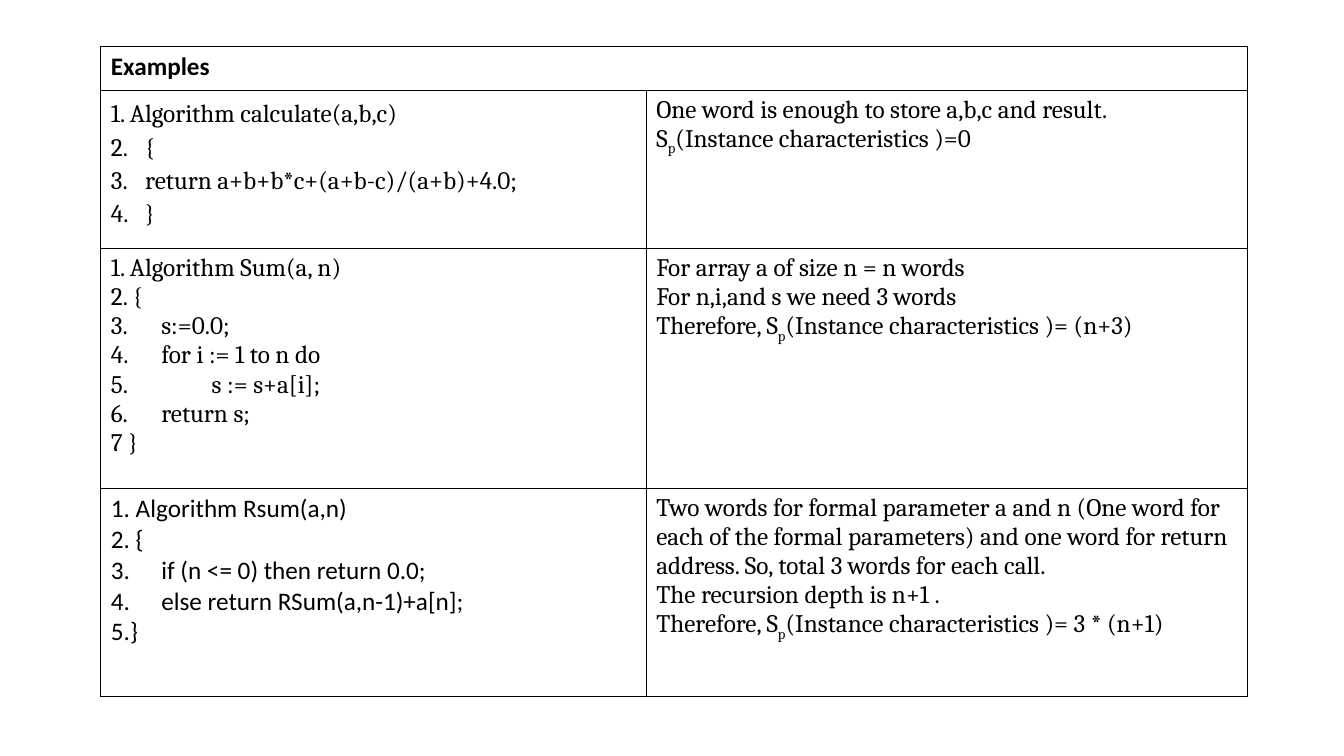
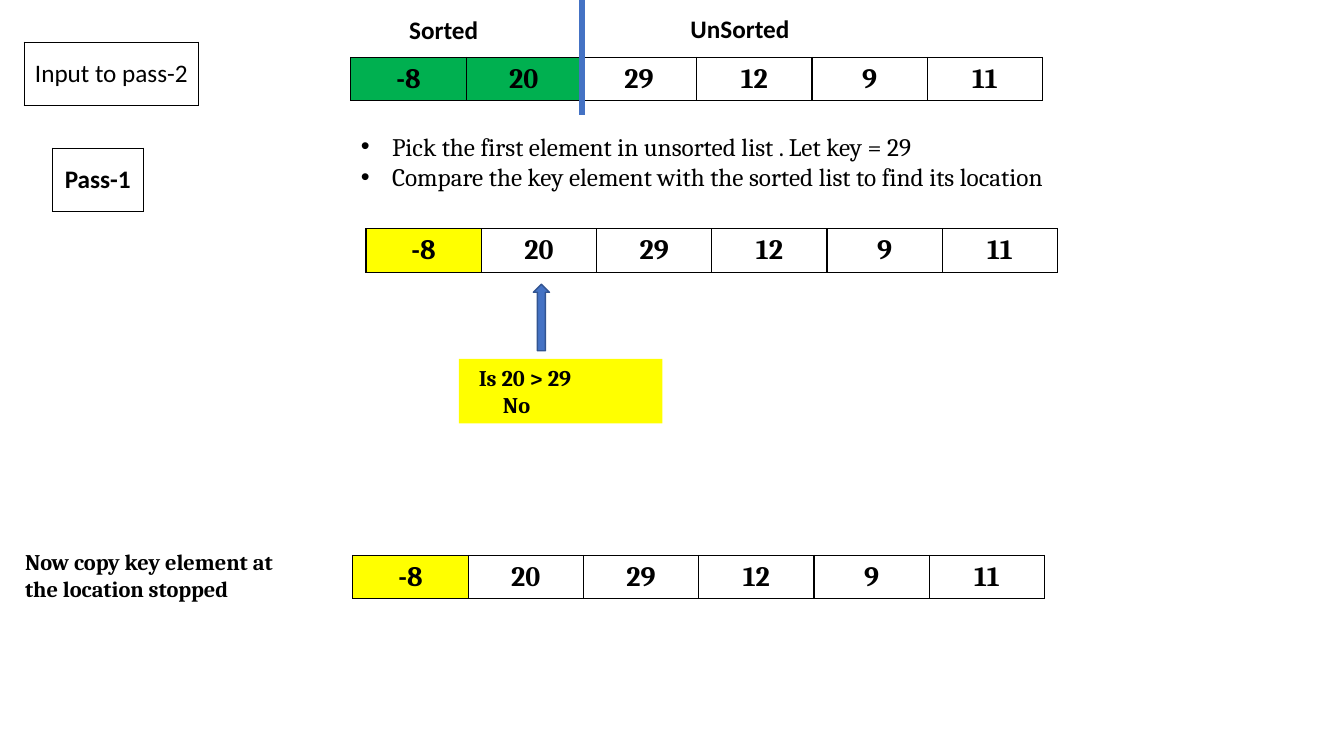
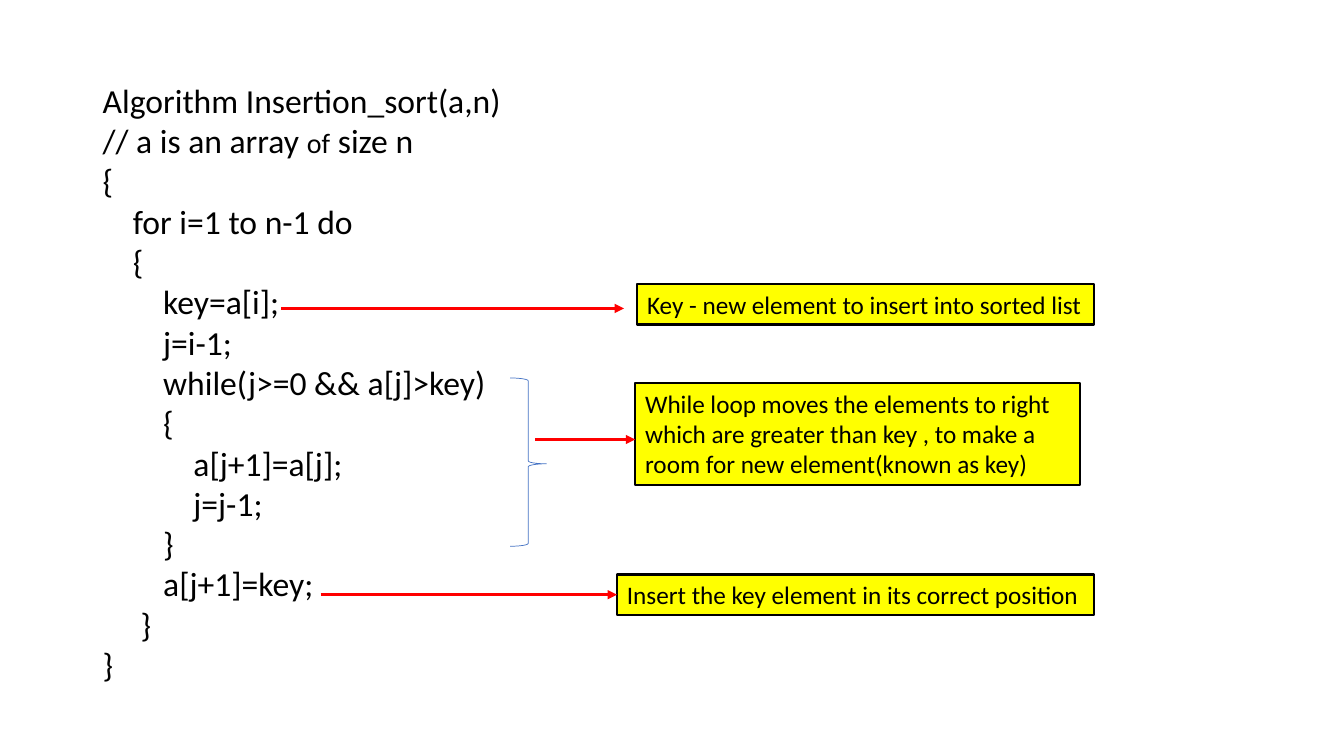
"""Build three slides on space complexity and insertion sort."""
from dataclasses import dataclass

from lxml import etree
from pptx import Presentation
from pptx import util as u
from pptx.dml.color import RGBColor
from pptx.enum import shapes, text
from pptx.oxml.ns import qn

BLACK = RGBColor(0, 0, 0)
WHITE = RGBColor(255, 255, 255)
GREEN = RGBColor(0x00, 0xB0, 0x50)
YELLOW = RGBColor(255, 255, 0)
RED = RGBColor(255, 0, 0)
BLUE = RGBColor(0x44, 0x72, 0xC4)
DARK_BLUE = RGBColor(0x32, 0x54, 0x91)
SANS, SERIF = "Calibri", "Cambria"


@dataclass
class Style:
    font: str = SANS
    size: int = 18
    bold: bool = False
    centred: bool = False
    spacing: float = 1.0


@dataclass
class Line:
    runs: tuple
    indent: float = 0
    tab: float = 0
    bullet: bool = False


@dataclass
class Small:
    text: str
    size: int = 18
    baseline: int = 0


BODY = Style(SERIF)
LABEL = Style(bold=True)
NUMBER = Style(SERIF, 20, True, True)
NOTE = Style(SERIF, 16, True)
CODE = Style(size=24)


def space_need(before, after):
    return Line((before + "S", Small("p", baseline=-25000),
                 "(Instance characteristics )" + after))


EXAMPLES = [
    (Style(SERIF, spacing=1.15),
     ["1. Algorithm calculate(a,b,c)", Line(("2.\t{",), tab=0.34),
      "3.\treturn a+b+b*c+(a+b-c)/(a+b)+4.0;", Line(("4.\t}",), tab=0.34)],
     ["One word is enough to store a,b,c and result.", space_need("", "=0")]),
    (BODY,
     ["1. Algorithm Sum(a, n)", "2. {", "3.\ts:=0.0;", "4.\tfor i := 1 to n do",
      "5.\t\ts := s+a[i];", "6.\treturn s;", "7 }"],
     ["For array a of size n = n words", "For n,i,and s we need 3 words",
      space_need("Therefore, ", "= (n+3)")]),
    (Style(),
     ["1. Algorithm Rsum(a,n)", "2. {", "3.\tif (n <= 0) then return 0.0;",
      "4.\telse return RSum(a,n-1)+a[n];", "5.}"],
     ["Two words for formal parameter a and n (One word for each of the formal "
      "parameters) and one word for return address. So, total 3 words for each call.",
      "The recursion depth is n+1 .", space_need("Therefore, ", "= 3 * (n+1)")]),
]
EXAMPLE_COLUMNS = [5.41, 5.96]
EXAMPLE_ROWS = [0.44, 1.57, 2.38, 2.06]

NUMBERS = ["-8", "20", "29", "12", "9", "11"]
ARRAYS = [(3.48, 0.57, [GREEN, GREEN]), (3.63, 2.27, [YELLOW]), (3.5, 5.51, [YELLOW])]
TAGS = [("Pass-1", LABEL, (0.52, 1.47, 0.9, 0.63)),
        ("Input to pass-2", Style(), (0.24, 0.42, 1.73, 0.63))]
HEADINGS = [("Sorted", (3.96, 0.09, 0.89, 0.4)), ("UnSorted", (6.75, 0.08, 1.19, 0.4))]
STEPS = ["Pick the first element in unsorted list . Let key = 29",
         "Compare the key element with the sorted list to find its location"]

CODE_STEP = 0.3
SORT_CODE = [
    (0, "Algorithm Insertion_sort(a,n)"),
    (0, "// a is an array ", Small("of", 20), " size n"),
    (0, "{"), (1, "for i=1 to n-1 do"), (1, "{"), (2, "key=a[i];"), (2, "j=i-1;"),
    (2, "while(j>=0 && a[j]>key)"), (2, "{"), (3, "a[j+1]=a[j];"), (3, "j=j-1;"),
    (2, "}"), (2, "a[j+1]=key;"), (1.25, "}"), (0, "}"),
]
CALLOUTS = [
    ("Key - new element to insert into sorted list",
     (6.32, 2.82, 4.53, 0.4), (2.79, 3.06), (6.19, 3.06), False),
    ("While loop moves the elements to right which are greater than key , "
     "to make a room for new element(known as key)",
     (6.3, 3.8, 4.41, 1.01), (5.31, 4.36), (6.3, 4.36), False),
    ("Insert the key element in its correct position",
     (6.12, 5.7, 4.73, 0.4), (3.18, 5.9), (6.12, 5.9), True),
]


def inches(values):
    return [u.Inches(value) for value in values]


def write(frame, lines, style):
    for index, line in enumerate(lines):
        line = line if isinstance(line, Line) else Line((line,))
        para = frame.paragraphs[0] if index == 0 else frame.add_paragraph()
        para.alignment = text.PP_ALIGN.CENTER if style.centred else text.PP_ALIGN.LEFT
        para.line_spacing = style.spacing
        props = para._p.get_or_add_pPr()
        if line.indent:
            props.set("marL", str(u.Inches(line.indent)))
        if line.bullet:
            props.set("indent", str(-u.Inches(line.indent)))
            etree.SubElement(props, qn("a:buFont"), typeface="Arial")
            etree.SubElement(props, qn("a:buChar"), char="•")
        if line.tab:
            stops = etree.SubElement(props, qn("a:tabLst"))
            etree.SubElement(stops, qn("a:tab"), pos=str(u.Inches(line.tab)), algn="l")
        for part in line.runs:
            part = part if isinstance(part, Small) else Small(part, style.size)
            span = para.add_run()
            span.text = part.text
            span.font.name, span.font.size = style.font, u.Pt(part.size)
            span.font.bold = style.bold
            span.font.color.rgb = BLACK
            if part.baseline:
                span._r.get_or_add_rPr().set("baseline", str(part.baseline))


def paint(shape, fill, line=None, width=1):
    shape.shadow.inherit = False
    if fill is None:
        shape.fill.background()
    else:
        shape.fill.solid()
        shape.fill.fore_color.rgb = fill
    if line is None:
        shape.line.fill.background()
    else:
        shape.line.color.rgb = line
        shape.line.width = u.Pt(width)


def add_text(page, place, lines, style, wrap=True):
    box = page.shapes.add_textbox(*inches(place))
    box.text_frame.word_wrap = wrap
    write(box.text_frame, lines, style)


def add_note(page, place, lines, style, line=None):
    note = page.shapes.add_shape(shapes.MSO_SHAPE.RECTANGLE, *inches(place))
    paint(note, YELLOW, line, 1.5)
    note.text_frame.word_wrap = True
    note.text_frame.vertical_anchor = text.MSO_ANCHOR.TOP
    write(note.text_frame, lines, style)
    return note


def add_line(page, start, end, color, width, arrow=False):
    line = page.shapes.add_connector(shapes.MSO_CONNECTOR.STRAIGHT, *inches(start + end))
    line.line.color.rgb = color
    line.line.width = u.Pt(width)
    if arrow:
        etree.SubElement(line.line._get_or_add_ln(), qn("a:tailEnd"), type="triangle")
    etree.SubElement(line._element.spPr, qn("a:effectLst"))
    return line


def add_grid(page, place, rows, columns):
    grid = page.shapes.add_table(rows, columns, *inches(place)).table
    grid.first_row = grid.horz_banding = False
    for cell in grid.iter_cells():
        props = cell._tc.get_or_add_tcPr()
        for side in ("a:lnL", "a:lnR", "a:lnT", "a:lnB"):
            edge = etree.SubElement(props, qn(side), w=str(u.Pt(1)))
            ink = etree.SubElement(edge, qn("a:solidFill"))
            etree.SubElement(ink, qn("a:srgbClr"), val=str(BLACK))
        cell.fill.solid()
        cell.fill.fore_color.rgb = WHITE
    return grid


def add_row(page, place, words, style, fills=()):
    grid = add_grid(page, place, 1, len(words))
    for cell, word in zip(grid.iter_cells(), words):
        cell.vertical_anchor = text.MSO_ANCHOR.MIDDLE
        write(cell.text_frame, [Line((word,))], style)
    for cell, fill in zip(grid.iter_cells(), fills):
        cell.fill.fore_color.rgb = fill


def build_examples(page):
    place = (1, 0.46, sum(EXAMPLE_COLUMNS), sum(EXAMPLE_ROWS))
    grid = add_grid(page, place, len(EXAMPLE_ROWS), len(EXAMPLE_COLUMNS))
    for column, width in zip(grid.columns, EXAMPLE_COLUMNS):
        column.width = u.Inches(width)
    for row, height in zip(grid.rows, EXAMPLE_ROWS):
        row.height = u.Inches(height)
    grid.cell(0, 0).merge(grid.cell(0, 1))
    write(grid.cell(0, 0).text_frame, ["Examples"], LABEL)
    for index, (style, code, need) in enumerate(EXAMPLES, 1):
        write(grid.cell(index, 0).text_frame, code, style)
        write(grid.cell(index, 1).text_frame, need, BODY)


def build_pass(page):
    for word, style, place in TAGS:
        add_row(page, place, [word], Style(bold=style.bold, centred=True))
    for left, top, fills in ARRAYS:
        add_row(page, (left, top, 6.86, 0.43), NUMBERS, NUMBER, fills)
    add_line(page, (5.77, 0), (5.77, 1.14), BLUE, 4.5)
    for word, place in HEADINGS:
        add_text(page, place, [word], LABEL, wrap=False)
    steps = [Line((step,), indent=0.31, bullet=True) for step in STEPS]
    add_text(page, (3.48, 1.25, 8.18, 0.71), steps, BODY)
    arrow = page.shapes.add_shape(shapes.MSO_SHAPE.UP_ARROW, *inches((5.29, 2.82, 0.16, 0.66)))
    paint(arrow, BLUE, DARK_BLUE)
    answer = [Line(("Is 20 > 29",), indent=0.1), Line(("No",), indent=0.34)]
    add_note(page, (4.55, 3.56, 2.02, 0.64), answer, NOTE)
    add_text(page, (0.15, 5.39, 2.75, 0.64),
             ["Now copy key element at the location stopped"], NOTE)


def build_sort(page):
    code = [Line(tuple(runs), indent=level * CODE_STEP) for level, *runs in SORT_CODE]
    add_text(page, (0.92, 0.74, 5.28, 6.16), code, CODE)
    for words, place, start, end, joined in CALLOUTS:
        note = add_note(page, place, [words], Style(), BLACK)
        arrow = add_line(page, start, end, RED, 2.25, arrow=True)
        if joined:
            arrow.end_connect(note, 1)
    brace = page.shapes.add_shape(shapes.MSO_SHAPE.RIGHT_BRACE, *inches((5.06, 3.75, 0.36, 1.67)))
    brace.adjustments[0], brace.adjustments[1] = 0.08, 0.51
    paint(brace, None, BLUE, 0.5)


def main():
    deck = Presentation()
    deck.slide_width, deck.slide_height = inches((13.33, 7.5))
    for build in (build_examples, build_pass, build_sort):
        build(deck.slides.add_slide(deck.slide_layouts[6]))
    deck.save("out.pptx")


if __name__ == "__main__":
    main()
